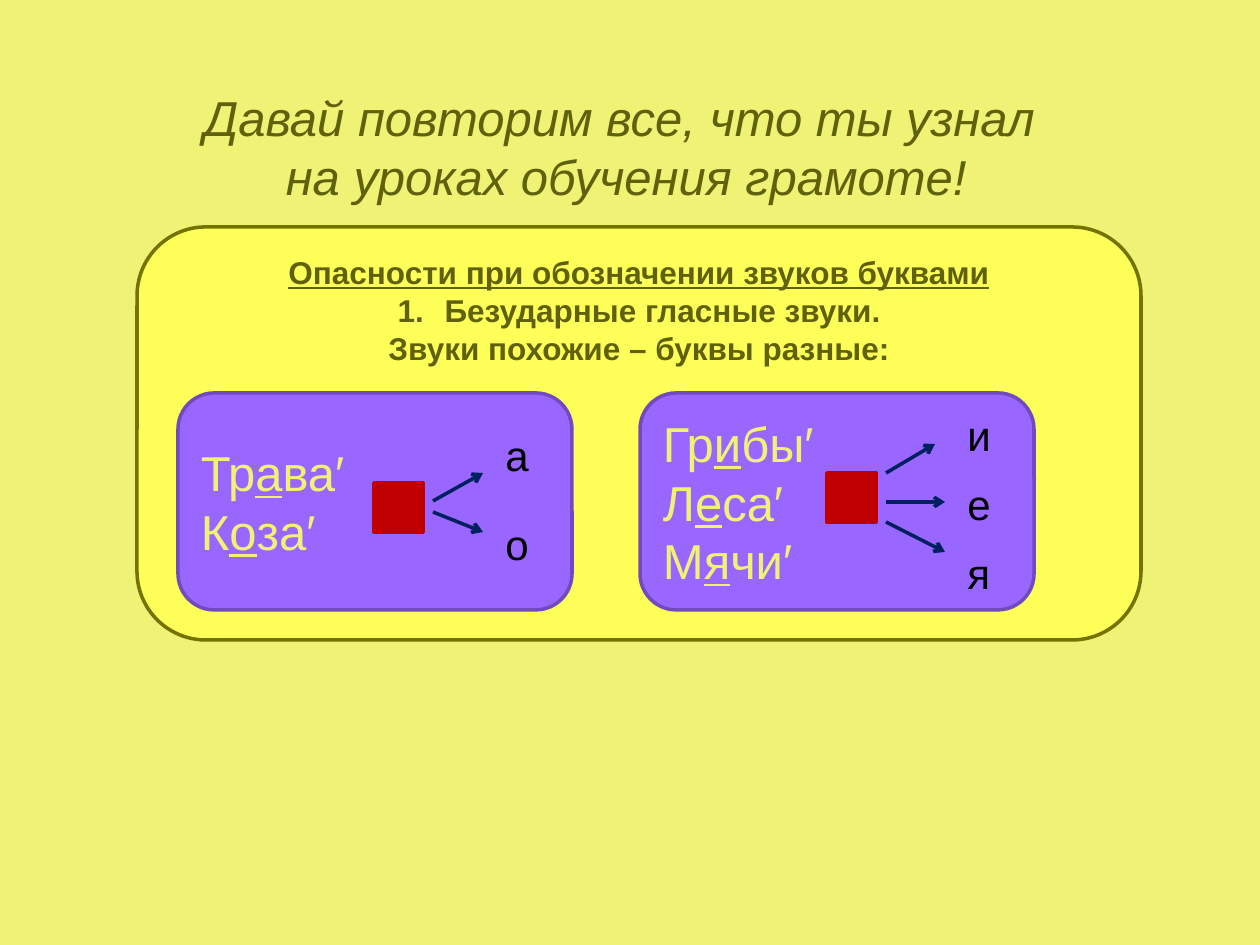
from pptx import Presentation
from pptx.dml.color import RGBColor
from pptx.enum.shapes import MSO_CONNECTOR, MSO_SHAPE
from pptx.enum.text import MSO_ANCHOR, MSO_AUTO_SIZE, PP_ALIGN
from pptx.oxml.ns import qn
from pptx.util import Pt
from lxml import etree

RECT, ROUND = MSO_SHAPE.RECTANGLE, MSO_SHAPE.ROUNDED_RECTANGLE
LINE = MSO_CONNECTOR.STRAIGHT
TOP, MIDDLE = MSO_ANCHOR.TOP, MSO_ANCHOR.MIDDLE
LEFT, CENTER = PP_ALIGN.LEFT, PP_ALIGN.CENTER
FIXED, GROW = MSO_AUTO_SIZE.NONE, MSO_AUTO_SIZE.SHAPE_TO_FIT_TEXT

SCALE = 914400 / 126
FONT = "Arial"
COLORS = {
    "back": "EFF274", "olive": "60610C", "panel": "FFFF59", "rim": "737300",
    "card": "9966FF", "edge": "714BBD", "red": "C00000", "navy": "002060",
    "black": "000000",
}


def px(*nums):
    return [round(n * SCALE) for n in nums]


def color(name):
    return RGBColor.from_string(COLORS[name])


def write(frame, text, size=18, ink="black", align=LEFT, anchor=TOP,
          bold=False, italic=False, fit=FIXED):
    """Fill a frame; _x_ underlines x, \\n parts paragraphs, \\v breaks a line."""
    frame.word_wrap = True
    frame.auto_size = fit
    frame.vertical_anchor = anchor
    for i, line in enumerate(text.split("\n")):
        para = frame.paragraphs[0] if i == 0 else frame.add_paragraph()
        para.alignment = align
        for j, part in enumerate(line.split("_")):
            for k, piece in enumerate(part.split("\v")):
                if k:
                    para.add_line_break()
                if not piece:
                    continue
                run = para.add_run()
                run.text = piece
                font = run.font
                font.name, font.size = FONT, Pt(size)
                font.bold, font.italic = bold, italic
                font.underline = j % 2 == 1
                font.color.rgb = color(ink)


def hang(para, indent, number=False):
    """Set a hanging indent, with a 1. number if asked."""
    props = para._p.get_or_add_pPr()
    props.set("marL", str(indent))
    props.set("indent", str(-indent))
    if number:
        etree.SubElement(props, qn("a:buAutoNum"), type="arabicPeriod")


class Deck:
    def __init__(self):
        self.prs = Presentation()
        self.prs.slide_width, self.prs.slide_height = px(1260, 945)
        self.slide = self.prs.slides.add_slide(self.prs.slide_layouts[5])
        fill = self.slide.background.fill
        fill.solid()
        fill.fore_color.rgb = color("back")

    def title(self, box, text, **style):
        shape = self.slide.shapes.title
        shape.left, shape.top, shape.width, shape.height = px(*box)
        write(shape.text_frame, text, **style)

    def shape(self, kind, box, fill, line):
        shape = self.slide.shapes.add_shape(kind, *px(*box))
        shape.shadow.inherit = False
        shape.fill.solid()
        shape.fill.fore_color.rgb = color(fill)
        shape.line.color.rgb = color(line)
        shape.line.width = Pt(2)
        return shape.text_frame

    def label(self, box, text, **style):
        frame = self.slide.shapes.add_textbox(*px(*box)).text_frame
        write(frame, text, fit=GROW, **style)

    def arrow(self, start, end):
        line = self.slide.shapes.add_connector(LINE, *px(*start, *end))
        line.line.color.rgb = color("navy")
        line.line.width = Pt(2)
        etree.SubElement(line.line._get_or_add_ln(), qn("a:tailEnd"), type="arrow")
        etree.SubElement(line._element.spPr, qn("a:effectLst"))

    def card(self, left, words, square, arrows, letters, first, step):
        """Draw words, a red sound square and arrows to its letters."""
        frame = self.shape(ROUND, (left, 393, 394, 217), "card", "edge")
        write(frame, words, size=28, ink="back", anchor=MIDDLE)
        self.shape(RECT, (*square, 49, 49), "red", "red")
        for start, end in arrows:
            self.arrow(start, end)
        for i, letter in enumerate(letters):
            self.label((left + 315, first + i * step, 39, 63), letter, size=24)


def main():
    deck = Deck()
    deck.title((59, 78, 1134, 137),
               "Давай повторим все, что ты узнал \vна уроках обучения грамоте!",
               size=28, ink="olive", align=CENTER, anchor=MIDDLE, italic=True)

    panel = deck.shape(ROUND, (137, 227, 1004, 413), "panel", "rim")
    write(panel, "_Опасности при обозначении звуков буквами_\n"
                 "Безударные гласные звуки.\nЗвуки похожие – буквы разные:",
          ink="olive", align=CENTER, bold=True)
    indent = px(47)[0]
    hang(panel.paragraphs[1], indent, number=True)
    hang(panel.paragraphs[2], indent)

    deck.card(178, "Тр_а_ва′\nК_о_за′", (374, 483),
              [((433, 501), (483, 473)), ((433, 512), (483, 532))],
              "ао", 423, 89)
    deck.card(640, "Гр_и_бы′\nЛ_е_са′\nМ_я_чи′", (827, 473),
              [((886, 473), (935, 444)), ((886, 502), (945, 502)),
               ((886, 522), (945, 552))],
              "иея", 403, 69)
    deck.prs.save("out.pptx")


if __name__ == "__main__":
    main()
